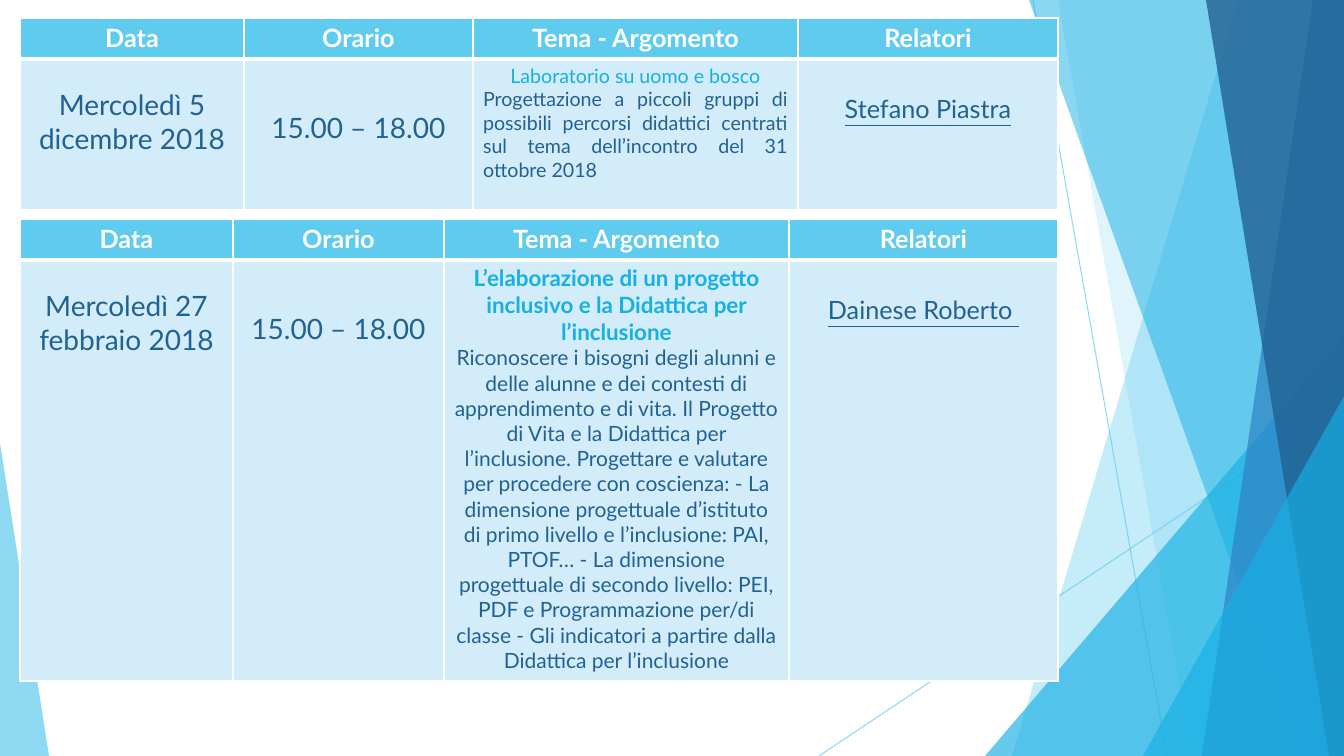
"""Build a slide with two course timetables over a faceted backdrop."""
import pptx
import pptx.util
import pptx.dml.color
import pptx.enum.shapes
import pptx.enum.text
import pptx.oxml
import pptx.oxml.ns

RGB = pptx.dml.color.RGBColor
ALIGN = pptx.enum.text.PP_ALIGN
SHAPE = pptx.enum.shapes.MSO_SHAPE
qn = pptx.oxml.ns.qn
WHITE = RGB(0xFF, 0xFF, 0xFF)
SKY = RGB(0x5F, 0xCB, 0xEF)
CYAN = RGB(0x17, 0xB0, 0xE4)
BLUE = RGB(0x2E, 0x83, 0xC3)
NAVY = RGB(0x22, 0x62, 0x92)
PALE = RGB(0xD2, 0xEC, 0xF9)
SCALE = 914400 / 100.8
WIDE, HIGH = 1344, 756
HEADS = ["Data", "Orario", "Tema - Argomento", "Relatori"]
LINES = [(1033, 0, 1167, 756), (1344, 406, 819, 756)]
FACETS = [
    ("band", (1238, 1012), SKY, 36),
    ("band", (1058, 1192), SKY, 20),
    ("peak", (985, 336, 359, 420, 1), CYAN, 66),
    ("band", (1029, 1301), CYAN, 50),
    ("band", (1313, 1202), BLUE, 70),
    ("band", (1206, 1329), NAVY, 80),
    ("peak", (1143, 396, 201, 360, 1), CYAN, 66),
    ("peak", (0, 443, 49, 313, 0), SKY, 70),
]
LARGE = {"size": 20}
NAME = {"size": 18, "underline": True}
NOTE = {"size": 14}
TITLE = {"size": 16, "bold": True}
PLAN = {"size": 15}
MID, FULL = ALIGN.CENTER, ALIGN.JUSTIFY
HOURS = (52, [("15.00 – 18.00", LARGE, NAVY, MID)])
FIRST = [
    (29, [("Mercoledì 5", LARGE, NAVY, MID), ("dicembre 2018", LARGE, NAVY, MID)]),
    HOURS,
    (5, [("Laboratorio su uomo e bosco", NOTE, CYAN, MID),
         ("Progettazione a piccoli gruppi di possibili percorsi didattici centrati "
          "sul tema dell’incontro del 31 ottobre 2018", NOTE, NAVY, FULL)]),
    (35, [("Stefano Piastra", NAME, NAVY, MID)]),
]
SECOND = [
    (29, [("Mercoledì 27", LARGE, NAVY, MID), ("febbraio 2018", LARGE, NAVY, MID)]),
    HOURS,
    (5, [("L’elaborazione di un progetto inclusivo e la Didattica per l’inclusione",
          TITLE, CYAN, MID),
         ("Riconoscere i bisogni degli alunni e delle alunne e dei contesti di "
          "apprendimento e di vita. Il Progetto di Vita e la Didattica per "
          "l’inclusione. Progettare e valutare per procedere con coscienza: - La "
          "dimensione progettuale d’istituto di primo livello e l’inclusione: PAI, "
          "PTOF… - La dimensione progettuale di secondo livello: PEI, PDF e "
          "Programmazione per/di classe - Gli indicatori a partire dalla Didattica "
          "per l’inclusione", PLAN, NAVY, MID)]),
    (35, [("Dainese Roberto ", NAME, NAVY, MID)]),
]


def px(num):
    """Turn px into EMU."""
    return pptx.util.Emu(round(num * SCALE))


def fade(shape, alpha):
    """Set the opacity, in percent, of each colour in a shape."""
    for tint in shape._element.spPr.iter(qn("a:srgbClr")):
        pptx.oxml.ns  # noqa
        tint.append(tint.makeelement(qn("a:alpha"), {"val": str(alpha * 1000)}))


def backdrop(slide, box):
    """Draw the thin lines and clear facets within the box."""
    left, top, wide, high = box
    kind = pptx.enum.shapes.MSO_CONNECTOR.STRAIGHT
    for x1, y1, x2, y2 in LINES:
        line = slide.shapes.add_connector(
            kind, px(left + x1), px(top + y1), px(left + x2), px(top + y2))
        line.line.color.rgb = SKY
        line.line.width = pptx.util.Pt(0.75)
        props = line._element.spPr
        props.append(props.makeelement(qn("a:effectLst"), {}))
        fade(line, 70)
    for form, spot, tint, alpha in FACETS:
        if form == "band":
            head, foot = spot
            end, base = left + wide, top + high
            pen = slide.shapes.build_freeform(left + head, top, scale=SCALE)
            pen.add_line_segments([(end, top), (end, base), (left + foot, base)])
            facet = pen.convert_to_shape()
        else:
            x, y, w, h, tip = spot
            facet = slide.shapes.add_shape(
                SHAPE.ISOSCELES_TRIANGLE, px(left + x), px(top + y), px(w), px(h))
            facet.adjustments[0] = tip
        facet.shadow.inherit = False
        facet.fill.solid()
        facet.fill.fore_color.rgb = tint
        facet.line.fill.background()
        fade(facet, alpha)


def edge(cell, sides):
    """Give a cell white borders, with widths in points by side."""
    props = cell._tc.get_or_add_tcPr()
    for spot, (side, width) in enumerate(sides.items()):
        line = props.makeelement(qn("a:ln" + side), {"w": str(width * 12700)})
        fill = line.makeelement(qn("a:solidFill"), {})
        fill.append(fill.makeelement(qn("a:srgbClr"), {"val": str(WHITE)}))
        line.append(fill)
        props.insert(spot, line)


def fill_cell(cell, tint, inset, paras, sides):
    """Fill a cell with its colour, text and borders."""
    cell.fill.solid()
    cell.fill.fore_color.rgb = tint
    cell.margin_top = px(inset)
    frame = cell.text_frame
    for spot, (text, style, ink, align) in enumerate(paras):
        para = frame.add_paragraph() if spot else frame.paragraphs[0]
        para.alignment = align
        run = para.add_run()
        run.text = text
        look = {"name": "Lato", "bold": False, **style}
        look["size"] = pptx.util.Pt(style["size"])
        for key, value in look.items():
            setattr(run.font, key, value)
        run.font.color.rgb = ink
    edge(cell, sides)


def timetable(slide, box, cols, body):
    """Place a two-row timetable in the box."""
    left, top, wide, high = box
    head = 41
    table = slide.shapes.add_table(
        2, len(cols), px(left), px(top), px(wide), px(high)).table
    table.horz_banding = False
    for col, width in zip(table.columns, cols):
        col.width = px(width)
    for row, height in zip(table.rows, (head, high - head)):
        row.height = px(height)
    for spot, (name, (inset, paras)) in enumerate(zip(HEADS, body)):
        title = [(name, {"size": 18, "bold": True}, WHITE, MID)]
        fill_cell(table.cell(0, spot), SKY, 5, title,
                  {"L": 1, "R": 1, "T": 1, "B": 3})
        fill_cell(table.cell(1, spot), PALE, inset, paras,
                  {"L": 1, "R": 1, "T": 3, "B": 1})


def main():
    """Build and save the slide."""
    deck = pptx.Presentation()
    deck.slide_width, deck.slide_height = px(WIDE), px(HIGH)
    slide = deck.slides.add_slide(deck.slide_layouts[6])
    backdrop(slide, (0, 0, WIDE, HIGH))
    timetable(slide, (20, 18, 1038, 192), (224, 229, 325, 260), FIRST)
    timetable(slide, (20, 219, 1038, 462), (213, 211, 345, 269), SECOND)
    deck.save("out.pptx")


if __name__ == "__main__":
    main()
